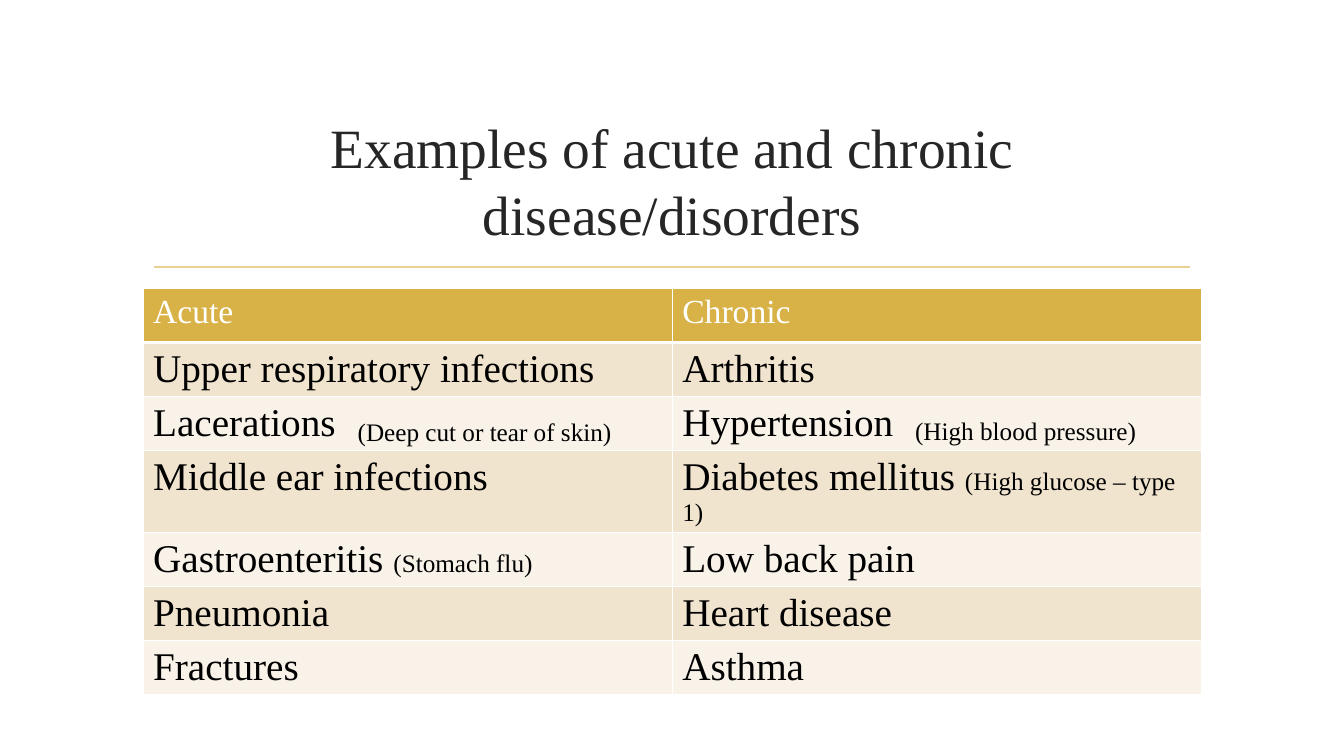
from dataclasses import dataclass

from lxml.etree import SubElement
from pptx import Presentation
from pptx.dml.color import RGBColor
from pptx.enum.shapes import MSO_CONNECTOR
from pptx.enum.text import MSO_ANCHOR, MSO_AUTO_SIZE, PP_ALIGN
from pptx.oxml.ns import qn
from pptx.util import Pt


@dataclass(frozen=True)
class Theme:
    """Font, type sizes and colours of the slide."""
    font: str = "Times New Roman"
    title_size: float = 39.6
    head_size: float = 24
    body_size: float = 28
    note_size: float = 18
    title: str = "262626"
    text: str = "000000"
    white: str = "FFFFFF"
    rule: str = "E8D191"
    head: str = "D9B247"
    bands: tuple = ("F1E4CF", "F8F2E9")


THEME = Theme()
LEFT, WIDTH = 102.2, 756
ROWS = [
    (("Acute",), ("Chronic",)),
    (("Upper respiratory infections",), ("Arthritis",)),
    (("Lacerations",), ("Hypertension",)),
    (("Middle ear infections",), ("Diabetes mellitus ", "(High glucose – type 1)")),
    (("Gastroenteritis ", "(Stomach flu)"), ("Low back pain",)),
    (("Pneumonia",), ("Heart disease",)),
    (("Fractures",), ("Asthma",)),
]


def style(r, size, color):
    """Format one run."""
    r.font.name = THEME.font
    r.font.size = Pt(size)
    r.font.color.rgb = RGBColor.from_string(color)


def add_title(s, text):
    """Fill and place the title placeholder."""
    sp = s.shapes.title
    sp.left, sp.top, sp.width, sp.height = Pt(LEFT), Pt(77), Pt(WIDTH), Pt(103)
    tf = sp.text_frame
    tf.text = text
    tf.word_wrap = True
    tf.auto_size = MSO_AUTO_SIZE.NONE
    tf.vertical_anchor = MSO_ANCHOR.MIDDLE
    p = tf.paragraphs[0]
    p.alignment = PP_ALIGN.CENTER
    style(p.runs[0], THEME.title_size, THEME.title)


def add_rule(s):
    """Draw the rule under the title."""
    line = s.shapes.add_connector(
        MSO_CONNECTOR.STRAIGHT, Pt(110.2), Pt(190.8), Pt(850.3), Pt(190.8))
    line.line.color.rgb = RGBColor.from_string(THEME.rule)
    line.line.width = Pt(1.25)
    SubElement(line._element.spPr, qn("a:effectLst"))


def add_borders(cell, bottom):
    """Give a cell white borders, the lower one of the given width."""
    tcPr = cell._tc.get_or_add_tcPr()
    for side, width in (("L", 1), ("R", 1), ("T", 1), ("B", bottom)):
        ln = SubElement(tcPr, qn(f"a:ln{side}"), w=str(Pt(width)))
        fill = SubElement(ln, qn("a:solidFill"))
        SubElement(fill, qn("a:srgbClr"), val=THEME.white)


def fill_cell(cell, texts, row):
    """Write and colour a cell according to its row."""
    is_head = row == 0
    add_borders(cell, 3 if is_head else 1)
    cell.fill.solid()
    color = THEME.head if is_head else THEME.bands[(row - 1) % 2]
    cell.fill.fore_color.rgb = RGBColor.from_string(color)
    p = cell.text_frame.paragraphs[0]
    sizes = (THEME.head_size if is_head else THEME.body_size, THEME.note_size)
    for text, size in zip(texts, sizes):
        r = p.add_run()
        r.text = text
        style(r, size, THEME.white if is_head else THEME.text)


def add_disease_table(s):
    """Add the two-column table of diseases."""
    row_height = 38.7
    table = s.shapes.add_table(
        len(ROWS), 2, Pt(LEFT), Pt(205.9), Pt(WIDTH), Pt(row_height * len(ROWS))).table
    table.first_row = table.horz_banding = False
    for i, row in enumerate(ROWS):
        table.rows[i].height = Pt(row_height)
        for j, texts in enumerate(row):
            fill_cell(table.cell(i, j), texts, i)


def add_note(s, text, left, top, width):
    """Add a small explanation beside a table entry."""
    tf = s.shapes.add_textbox(Pt(left), Pt(top), Pt(width), Pt(29)).text_frame
    tf.text = text
    tf.word_wrap = True
    tf.auto_size = MSO_AUTO_SIZE.SHAPE_TO_FIT_TEXT
    style(tf.paragraphs[0].runs[0], THEME.note_size, THEME.text)


def main():
    """Build and save the slide."""
    prs = Presentation()
    prs.slide_width, prs.slide_height = Pt(960), Pt(540)
    s = prs.slides.add_slide(prs.slide_layouts[5])
    add_rule(s)
    add_title(s, "Examples of acute and chronic disease/disorders")
    add_disease_table(s)
    add_note(s, "(Deep cut or tear of skin)", 248.4, 293.8, 200.9)
    add_note(s, "(High blood pressure)", 646.6, 293, 211.7)
    prs.save("out.pptx")


if __name__ == "__main__":
    main()
